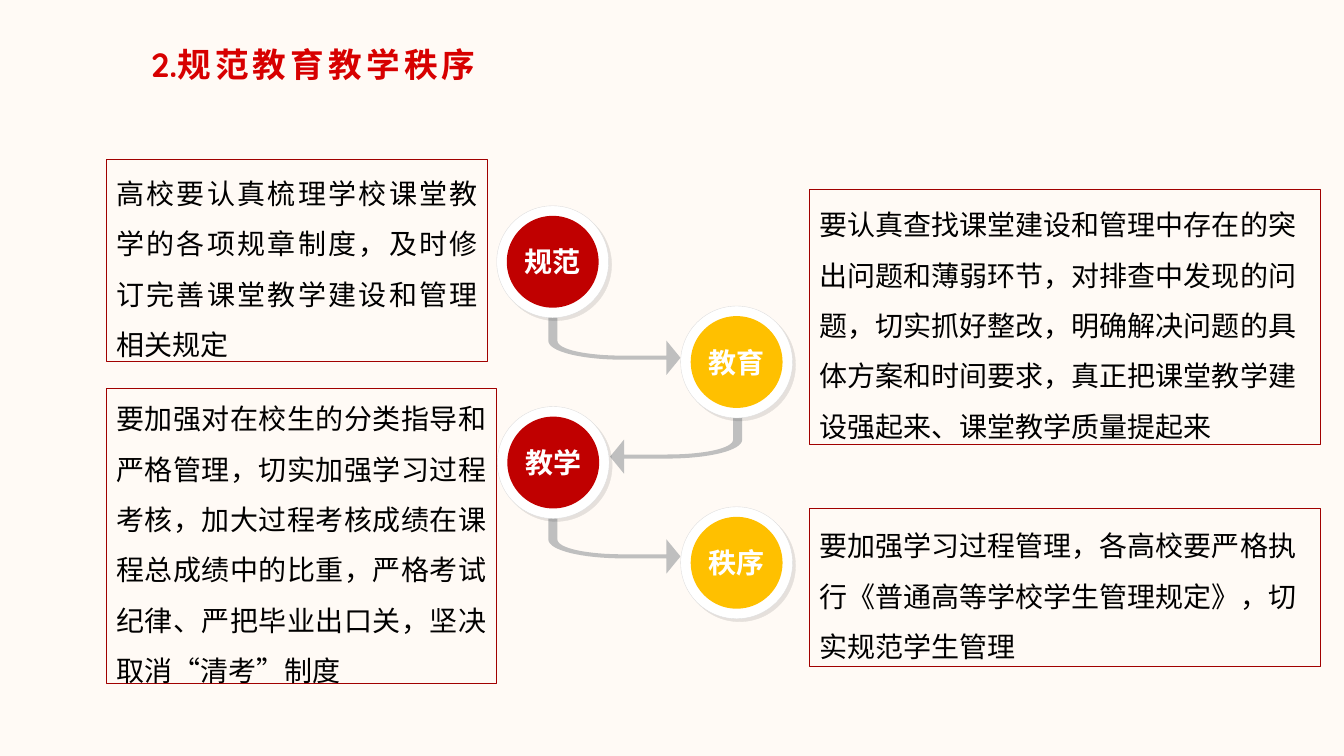
from lxml import etree
from pptx import Presentation
from pptx.dml.color import RGBColor
from pptx.enum.shapes import MSO_SHAPE
from pptx.enum.text import MSO_ANCHOR, MSO_AUTO_SIZE, PP_ALIGN
from pptx.oxml.ns import qn
from pptx.util import Pt

OVAL, RECTANGLE = MSO_SHAPE.OVAL, MSO_SHAPE.RECTANGLE
MIDDLE = MSO_ANCHOR.MIDDLE
GROW = MSO_AUTO_SIZE.SHAPE_TO_FIT_TEXT
LEFT, CENTER, JUSTIFY = PP_ALIGN.LEFT, PP_ALIGN.CENTER, PP_ALIGN.JUSTIFY

COLORS = {
    "background": "FFFAF5", "title": "D70000", "border": "A10000",
    "red": "C00000", "gold": "FFC000", "arrow": "BFBFBF",
    "ring": "DDDDDD", "white": "FFFFFF", "black": "000000",
}
CHINESE_FONT = "Noto Sans CJK SC"
RING_SIZE, DISC_SIZE = 80, 65.6
CURVE_STEPS = 16


def color(name):
    return RGBColor.from_string(COLORS[name])


def curve(start, control_1, control_2, end):
    """Points along a cubic Bezier curve, without its start."""
    points = []
    for step in range(1, CURVE_STEPS + 1):
        t = step / CURVE_STEPS
        weights = ((1 - t) ** 3, 3 * t * (1 - t) ** 2, 3 * t * t * (1 - t), t ** 3)
        corners = (start, control_1, control_2, end)
        points.append(tuple(sum(w * c[axis] for w, c in zip(weights, corners))
                            for axis in (0, 1)))
    return points


# Outline of an arrow that drops from (0, 0) and bends to the right.
ARROW_OUTLINE = [
    (94.4, 31), (84.4, 43.2), (84.4, 32.4), (54, 32.4),
    *curve((54, 32.4), (23.8, 32.4), (0, 26.6), (0, 18.8)),
    (0, 0), (6.5, 0), (6.5, 18.8),
    *curve((6.5, 18.8), (6.5, 25.2), (27.5, 29.5), (54, 29.5)),
    (84.4, 29.5), (84.4, 18.8),
]


class SlideBuilder:
    def __init__(self, slide):
        self.slide = slide
        slide.background.fill.solid()
        slide.background.fill.fore_color.rgb = color("background")

    def style_span(self, span, size, color_name, latin=CHINESE_FONT, bold=False):
        span.font.size, span.font.bold, span.font.name = Pt(size), bold, latin
        span.font.color.rgb = color(color_name)
        east_asian = etree.SubElement(span.font._element, qn("a:ea"))
        east_asian.set("typeface", CHINESE_FONT)

    def title(self, left, top, width, height, number, wording):
        box = self.slide.shapes.add_textbox(Pt(left), Pt(top), Pt(width), Pt(height))
        frame = box.text_frame
        frame.word_wrap, frame.vertical_anchor, frame.auto_size = True, MIDDLE, GROW
        para = frame.paragraphs[0]
        for text, latin in ((number, "Quicksand"), (wording, CHINESE_FONT)):
            span = para.add_run()
            span.text = text
            self.style_span(span, 24, "title", latin, bold=True)
        span.font._element.set("spc", "300")

    def shape(self, kind, left, top, width, height, fill=None, line=None, weight=0.75):
        shape = self.slide.shapes.add_shape(kind, Pt(left), Pt(top), Pt(width), Pt(height))
        self.paint(shape, fill, line, weight)
        return shape

    def paint(self, shape, fill=None, line=None, weight=0.75):
        shape.shadow.inherit = False
        if fill:
            shape.fill.solid()
            shape.fill.fore_color.rgb = color(fill)
        else:
            shape.fill.background()
        if line:
            shape.line.color.rgb = color(line)
            shape.line.width = Pt(weight)
        else:
            shape.line.fill.background()

    def cast_shadow(self, shape):
        effects = shape._element.spPr.find(qn("a:effectLst"))
        shadow = etree.SubElement(effects, qn("a:outerShdw"), blurRad="0",
                                  dist=str(Pt(3)), dir=str(45 * 60000),
                                  algn="tl", rotWithShape="0")
        tint = etree.SubElement(shadow, qn("a:srgbClr"), val=COLORS["black"])
        etree.SubElement(tint, qn("a:alpha"), val="10000")

    def badge(self, left, top, text, fill):
        """White ring with a coloured, labelled disc in its middle."""
        ring = self.shape(OVAL, left, top, RING_SIZE, RING_SIZE, "white", "ring", 0.25)
        self.cast_shadow(ring)
        inset = (RING_SIZE - DISC_SIZE) / 2
        disc = self.shape(OVAL, left + inset, top + inset, DISC_SIZE, DISC_SIZE, fill)
        frame = disc.text_frame
        frame.margin_left = frame.margin_right = 0
        frame.margin_top = frame.margin_bottom = 0
        self.set_text(frame, text, "white", CENTER, latin="Calibri", bold=True)

    def set_text(self, frame, text, color_name, align, spacing=None, **font):
        frame.text = text
        frame.word_wrap, frame.vertical_anchor = True, MIDDLE
        para = frame.paragraphs[0]
        para.alignment, para.line_spacing = align, spacing
        self.style_span(para.runs[0], 20, color_name, **font)

    def note(self, left, top, width, height, text, align):
        box = self.shape(RECTANGLE, left, top, width, height, line="border")
        self.set_text(box.text_frame, text, "black", align, spacing=1.5)

    def bent_arrow(self, left, top, direction):
        """Draw the arrow from (left, top); direction -1 turns it to the left."""
        points = [(Pt(left + direction * x), Pt(top + y)) for x, y in ARROW_OUTLINE]
        outline = self.slide.shapes.build_freeform(*points[0])
        outline.add_line_segments(points[1:], close=True)
        self.paint(outline.convert_to_shape(), "arrow")


def main():
    deck = Presentation()
    deck.slide_width, deck.slide_height = Pt(960), Pt(540)
    page = SlideBuilder(deck.slides.add_slide(deck.slide_layouts[6]))

    page.title(100.8, 28, 675.4, 36, "2.", "规范教育教学秩序")

    for left, top, direction in ((530.2, 295.2, -1), (391.7, 224.6, 1), (391.7, 366.5, 1)):
        page.bent_arrow(left, top, direction)

    for left, top, text, fill in (
        (486.2, 218.6, "教育", "gold"),
        (486.2, 362, "秩序", "gold"),
        (354.8, 147, "规范", "red"),
        (355.2, 290.4, "教学", "red"),
    ):
        page.badge(left, top, text, fill)

    page.note(75.8, 113.8, 272.6, 144.4,
              "高校要认真梳理学校课堂教学的各项规章制度，及时修订完善课堂教学建设和管理相关规定",
              JUSTIFY)
    page.note(578.2, 135.4, 365, 181.8,
              "要认真查找课堂建设和管理中存在的突出问题和薄弱环节，对排查中发现的问题，"
              "切实抓好整改，明确解决问题的具体方案和时间要求，真正把课堂教学建设强起来、"
              "课堂教学质量提起来", LEFT)
    page.note(75.8, 277.6, 278.8, 210.6,
              "要加强对在校生的分类指导和严格管理，切实加强学习过程考核，加大过程考核成绩"
              "在课程总成绩中的比重，严格考试纪律、严把毕业出口关，坚决取消“清考”制度",
              JUSTIFY)
    page.note(578.2, 363.2, 365, 112.8,
              "要加强学习过程管理，各高校要严格执行《普通高等学校学生管理规定》，"
              "切实规范学生管理", LEFT)

    deck.save("out.pptx")


if __name__ == "__main__":
    main()
